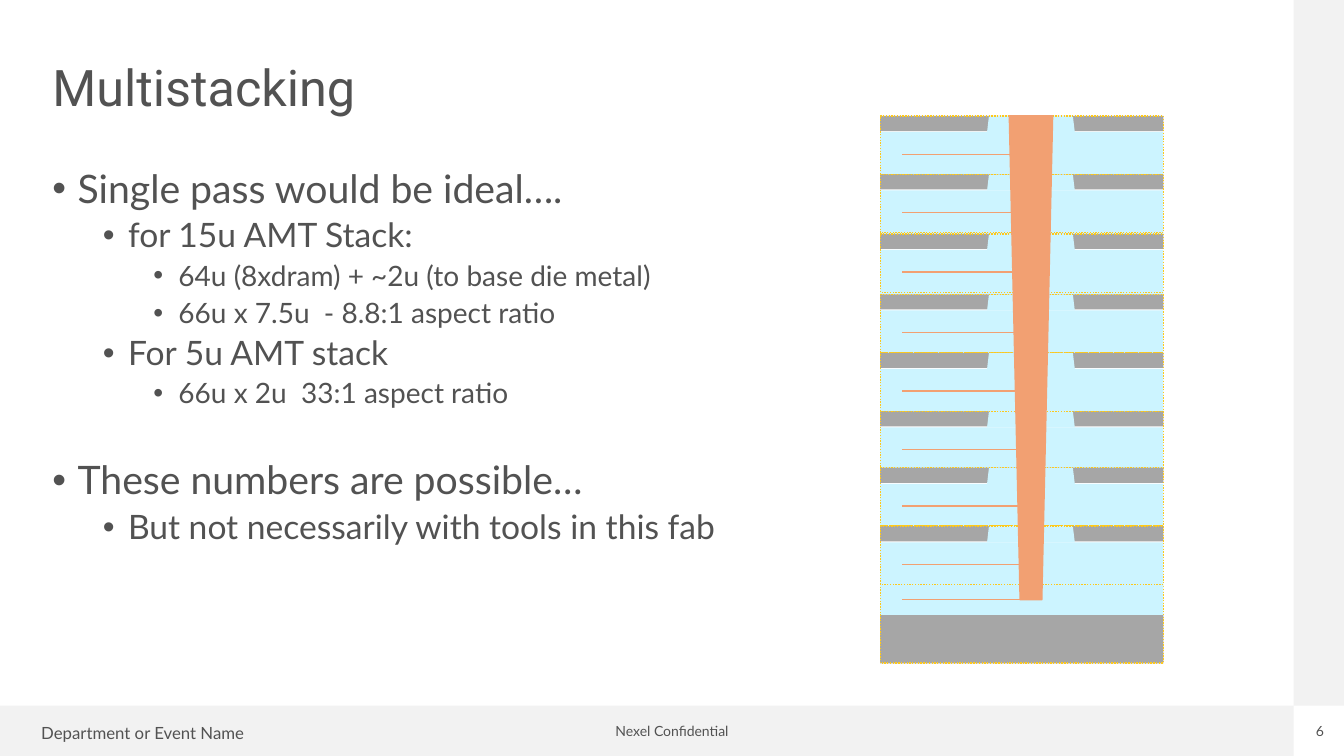
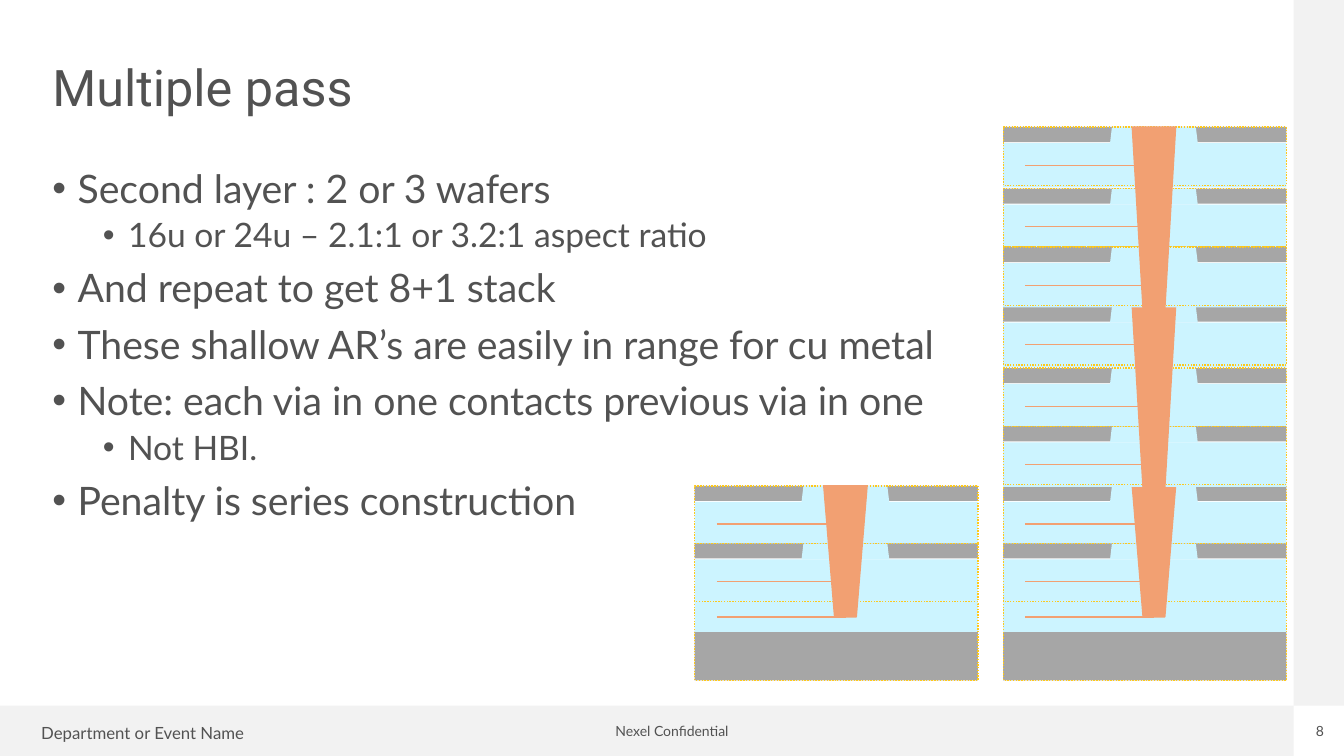
from dataclasses import dataclass
from typing import Optional, Union

import lxml.etree
import pptx
import pptx.dml.color
import pptx.enum.dml
import pptx.enum.shapes
import pptx.enum.text
import pptx.oxml.ns
import pptx.presentation
import pptx.shapes.autoshape
import pptx.shapes.shapetree
import pptx.slide
import pptx.text.text
import pptx.util

COLORS = {
    "text": "525252",
    "band": "F2F2F2",
    "silicon": "A6A6A6",
    "oxide": "CCF4FF",
    "outline": "FEC91B",
    "copper": "F2A072",
}
TITLE_FONT, BODY_FONT = "Roboto", "Lato"
CELL = pptx.util.Inches(0.01)  # all lengths below count cells of this grid
SLIDE_COLUMNS, SLIDE_ROWS = 1333, 750
BAND = 50
LEVEL_SIZES = (28, 24, 20)
LEVEL_SPACES = (10, 5, 5)

STACK_WIDTH = 281
LAYER_ROWS = 58
BASE_ROWS = 77
VIA_DEPTH_IN_BASE = 14

KIND = pptx.enum.shapes.MSO_SHAPE
ALIGN = pptx.enum.text.PP_ALIGN
Shapes = Union[pptx.shapes.shapetree.SlideShapes, pptx.shapes.shapetree.GroupShapes]


@dataclass(frozen=True)
class Frame:
    column: int
    row: int
    columns: int
    rows: int

    def lengths(self) -> tuple[int, int, int, int]:
        return (self.column * CELL, self.row * CELL, self.columns * CELL, self.rows * CELL)


@dataclass(frozen=True)
class Bullet:
    text: str
    level: int = 0
    space_before: Optional[float] = None


@dataclass(frozen=True)
class Pass:
    """Wafer layers that share one via."""

    layer_rows: tuple[int, ...]
    via_end: int


@dataclass(frozen=True)
class Stack:
    column: int
    base_row: int
    passes: tuple[Pass, ...]


@dataclass(frozen=True)
class Page:
    number: str
    title: str
    bullets: tuple[Bullet, ...]
    stacks: tuple[Stack, ...]


@dataclass(frozen=True)
class Label:
    text: str
    frame: Frame
    size: int
    alignment: ALIGN
    inset: int = 10


TITLE_FRAME = Frame(42, 24, 1200, 131)
BODY_FRAME = Frame(42, 163, 1200, 513)
BANDS = (
    Frame(0, SLIDE_ROWS - BAND, SLIDE_COLUMNS - BAND, BAND),
    Frame(SLIDE_COLUMNS - BAND, 0, BAND, SLIDE_ROWS - BAND),
)
FOOTERS = (
    Label("Nexel Confidential", Frame(600, 712, 133, 27), 10, ALIGN.CENTER),
    Label("Department or Event Name", Frame(31, 712, 238, 30), 12, ALIGN.LEFT),
)
NUMBER_FRAME = Frame(1300, 717, 18, 17)

LOWER_PASS = Pass((482, 539), 598 + VIA_DEPTH_IN_BASE)
PAGES = (
    Page(
        "6",
        "Multistacking",
        (
            Bullet("Single pass would be ideal…."),
            Bullet("for 15u AMT Stack:", 1),
            Bullet("64u (8xdram) + ~2u (to base die metal)", 2),
            Bullet("66u x 7.5u  - 8.8:1 aspect ratio", 2),
            Bullet("For 5u AMT stack", 1),
            Bullet("66u x 2u  33:1 aspect ratio", 2),
            Bullet("These numbers are possible…", 0, 36.6),
            Bullet("But not necessarily with tools in this fab", 1),
        ),
        (
            Stack(873, 581, (
                Pass((115, 173, 232, 292, 350, 408, 464, 522), 581 + VIA_DEPTH_IN_BASE),
            )),
        ),
    ),
    Page(
        "8",
        "Multiple pass",
        (
            Bullet("Second layer : 2 or 3 wafers"),
            Bullet("16u or 24u – 2.1:1 or 3.2:1 aspect ratio", 1),
            Bullet("And repeat to get 8+1 stack"),
            Bullet("These shallow AR’s are easily in range for cu metal"),
            Bullet("Note: each via in one contacts previous via in one"),
            Bullet("Not HBI.", 1),
            Bullet("Penalty is series construction"),
        ),
        (
            Stack(689, 598, (LOWER_PASS,)),
            Stack(995, 598, (
                LOWER_PASS,
                Pass((304, 365, 423), 485),
                Pass((126, 187, 245), 307),
            )),
        ),
    ),
)


def rgb(name: str) -> pptx.dml.color.RGBColor:
    return pptx.dml.color.RGBColor.from_string(COLORS[name])


def add_run(paragraph: pptx.text.text._Paragraph, text: str, size: int, font: str) -> None:
    run = paragraph.add_run()
    run.text = text
    run.font.size = pptx.util.Pt(size)
    run.font.name = font
    run.font.color.rgb = rgb("text")


def add_block(
    shapes: Shapes,
    frame: Frame,
    fill: Optional[str] = None,
    line: Optional[str] = None,
    kind: KIND = KIND.RECTANGLE,
) -> pptx.shapes.autoshape.Shape:
    shape = shapes.add_shape(kind, *frame.lengths())
    shape.shadow.inherit = False
    if fill:
        shape.fill.solid()
        shape.fill.fore_color.rgb = rgb(fill)
    else:
        shape.fill.background()
    if line:
        shape.line.color.rgb = rgb(line)
        shape.line.width = pptx.util.Pt(1)
    else:
        shape.line.fill.background()
    return shape


def add_outline(shapes: Shapes, frame: Frame) -> None:
    outline = add_block(shapes, frame, line="outline")
    outline.line.dash_style = pptx.enum.dml.MSO_LINE.ROUND_DOT


def add_lead(shapes: Shapes, stack_column: int, row: int) -> None:
    """Draw the metal line that runs from the die to the via."""
    lead = shapes.add_connector(
        pptx.enum.shapes.MSO_CONNECTOR.STRAIGHT,
        (stack_column + 22) * CELL,
        row * CELL,
        (stack_column + 150) * CELL,
        row * CELL,
    )
    lead.line.color.rgb = rgb("copper")
    lead.line.width = pptx.util.Pt(1)
    lxml.etree.SubElement(lead.element.spPr, pptx.oxml.ns.qn("a:effectLst"))


def add_base(shapes: Shapes, column: int, row: int) -> None:
    add_block(shapes, Frame(column, row + 28, STACK_WIDTH, 49), "silicon")
    add_block(shapes, Frame(column, row, STACK_WIDTH, 29), "oxide")
    add_outline(shapes, Frame(column, row, STACK_WIDTH, BASE_ROWS))
    add_lead(shapes, column, row + VIA_DEPTH_IN_BASE)


def add_layer(slide: pptx.slide.Slide, column: int, row: int) -> None:
    shapes = slide.shapes.add_group_shape().shapes
    add_block(shapes, Frame(column, row, STACK_WIDTH, 15), "silicon")
    opening = add_block(shapes, Frame(column + 106, row, 87, 16), "oxide", kind=KIND.TRAPEZOID)
    opening.adjustments[0] = 0.12
    add_block(shapes, Frame(column, row + 16, STACK_WIDTH, 44), "oxide")
    add_outline(shapes, Frame(column, row, STACK_WIDTH, LAYER_ROWS))
    add_lead(shapes, column, row + 38)


def add_stack(slide: pptx.slide.Slide, stack: Stack) -> None:
    add_base(slide.shapes, stack.column, stack.base_row)
    for via_pass in stack.passes:
        for row in via_pass.layer_rows:
            add_layer(slide, stack.column, row)
        top = via_pass.layer_rows[0]
        frame = Frame(stack.column + 128, top, 43, via_pass.via_end - top)
        via = add_block(slide.shapes, frame, "copper", "copper", KIND.TRAPEZOID)
        via.rotation = 180


def add_label(slide: pptx.slide.Slide, label: Label) -> None:
    text_frame = slide.shapes.add_textbox(*label.frame.lengths()).text_frame
    text_frame.word_wrap = False
    text_frame.auto_size = pptx.enum.text.MSO_AUTO_SIZE.SHAPE_TO_FIT_TEXT
    text_frame.margin_left = text_frame.margin_right = label.inset * CELL
    text_frame.margin_top = text_frame.margin_bottom = label.inset * CELL // 2
    paragraph = text_frame.paragraphs[0]
    paragraph.alignment = label.alignment
    add_run(paragraph, label.text, label.size, BODY_FONT)


def fill_title(slide: pptx.slide.Slide, title: str) -> None:
    text_frame = slide.shapes.title.text_frame
    text_frame.auto_size = pptx.enum.text.MSO_AUTO_SIZE.NONE
    text_frame.vertical_anchor = pptx.enum.text.MSO_ANCHOR.MIDDLE
    paragraph = text_frame.paragraphs[0]
    paragraph.alignment = ALIGN.LEFT
    paragraph.line_spacing = 0.9
    add_run(paragraph, title, 36, TITLE_FONT)


def fill_body(slide: pptx.slide.Slide, bullets: tuple[Bullet, ...]) -> None:
    text_frame = slide.placeholders[1].text_frame
    text_frame.auto_size = pptx.enum.text.MSO_AUTO_SIZE.NONE
    for index, bullet in enumerate(bullets):
        paragraph = text_frame.add_paragraph() if index else text_frame.paragraphs[0]
        paragraph.level = bullet.level
        properties = paragraph._p.get_or_add_pPr()
        properties.set("marL", str((25 + 50 * bullet.level) * CELL))
        properties.set("indent", str(-25 * CELL))
        for tag, name, value in (("a:buFont", "typeface", "Arial"), ("a:buChar", "char", "•")):
            lxml.etree.SubElement(properties, pptx.oxml.ns.qn(tag)).set(name, value)
        paragraph.line_spacing = 0.9
        space = bullet.space_before or LEVEL_SPACES[bullet.level]
        paragraph.space_before = pptx.util.Pt(space if index else 0)
        add_run(paragraph, bullet.text, LEVEL_SIZES[bullet.level], BODY_FONT)


def prepare_layout(presentation: pptx.presentation.Presentation) -> pptx.slide.SlideLayout:
    """Place the title and body once, so that every slide inherits them."""
    layout = presentation.slide_layouts[1]
    for placeholder, frame in zip(layout.placeholders, (TITLE_FRAME, BODY_FRAME)):
        placeholder.left, placeholder.top, placeholder.width, placeholder.height = frame.lengths()
    return layout


def add_page(
    presentation: pptx.presentation.Presentation, layout: pptx.slide.SlideLayout, page: Page
) -> None:
    slide = presentation.slides.add_slide(layout)
    for band in BANDS:
        add_block(slide.shapes, band, "band")
    for label in (*FOOTERS, Label(page.number, NUMBER_FRAME, 10, ALIGN.CENTER, 0)):
        add_label(slide, label)
    fill_title(slide, page.title)
    fill_body(slide, page.bullets)
    for stack in page.stacks:
        add_stack(slide, stack)


def main() -> None:
    presentation = pptx.Presentation()
    presentation.slide_width = SLIDE_COLUMNS * CELL
    presentation.slide_height = SLIDE_ROWS * CELL
    layout = prepare_layout(presentation)
    for page in PAGES:
        add_page(presentation, layout, page)
    presentation.save("out.pptx")


if __name__ == "__main__":
    main()
